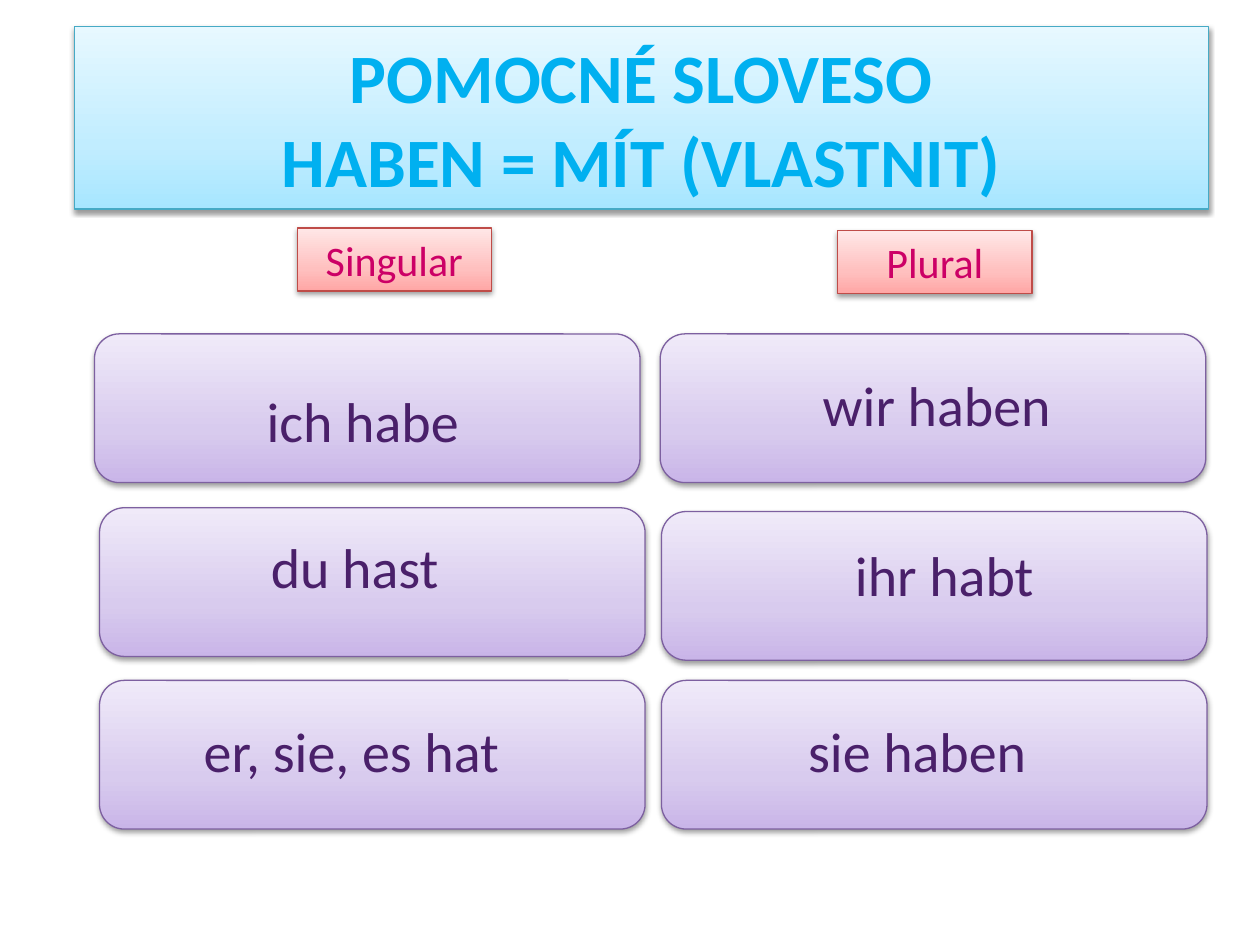
from copy import deepcopy
from dataclasses import dataclass

from lxml import etree
from pptx import Presentation
from pptx.dml.color import RGBColor
from pptx.enum.shapes import MSO_SHAPE as Shape
from pptx.enum.text import MSO_ANCHOR as Anchor, MSO_AUTO_SIZE as AutoSize, PP_ALIGN as Align
from pptx.oxml.ns import qn
from pptx.util import Inches, Pt


@dataclass(frozen=True)
class Theme:
    font: str = "Calibri"
    title_size: float = 39.6
    form_size: float = 32
    heading_size: float = 24
    title_color: str = "00B0F0"
    form_color: str = "4A206A"
    heading_color: str = "CC0066"
    # Outline, then gradient colours from bottom to top
    blue: tuple = ("46AAC5", "A7E6FF", "C1EDFF", "E7F8FF")
    red: tuple = ("BF4C48", "FFA6A5", "FFC0BF", "FFE7E7")
    purple: tuple = ("7D60A0", "C9B5E8", "D8CBEE", "F0EAF9")
    stops: tuple = (0, 0.35, 1)


THEME = Theme()
CARD_SIZE = (4.33, 1.18)
HEADING_SIZE = (1.54, 0.5)

# Heading text, left, top
HEADINGS = [("Singular", 2.36, 1.81), ("Plural", 6.65, 1.83)]

# Verb form, card position, text box
VERB_FORMS = [
    ("ich habe", (0.75, 2.65), (1.7, 3.02, 2.36, 0.64)),
    (" du hast", (0.79, 4.03), (1.57, 4.18, 2.39, 1.18)),
    ("er, sie, es hat", (0.79, 5.4), (0.83, 5.64, 3.92, 1.18)),
    ("wir haben", (5.24, 2.65), (5.69, 2.89, 3.49, 1.18)),
    ("ihr habt", (5.25, 4.06), (5.9, 4.24, 3.19, 1.18)),
    ("sie haben", (5.25, 5.4), (5.79, 5.64, 2.98, 1.18)),
]


def inches(*lengths):
    return [Inches(length) for length in lengths]


def write_text(shape, text, *, size, color, bold=False, anchor=Anchor.TOP):
    frame = shape.text_frame
    frame.word_wrap = True
    frame.auto_size = AutoSize.NONE
    frame.vertical_anchor = anchor
    paragraph = frame.paragraphs[0]
    paragraph.text = text
    paragraph.alignment = Align.CENTER
    for run in paragraph.runs:
        run.font.name = THEME.font
        run.font.size = Pt(size)
        run.font.bold = bold
        run.font.color.rgb = RGBColor.from_string(color)


def add_shadow(shape):
    shape.shadow.inherit = False
    effects = shape._element.spPr.find(qn("a:effectLst"))
    shadow = etree.SubElement(effects, qn("a:outerShdw"), blurRad="40000",
                              dist="20000", dir="5400000", rotWithShape="0")
    color = etree.SubElement(shadow, qn("a:srgbClr"), val="000000")
    etree.SubElement(color, qn("a:alpha"), val="38000")


def style_panel(shape, palette):
    outline, *colors = palette
    shape.fill.gradient()
    shape.fill.gradient_angle = 90
    # The default gradient has two stops; a third goes between them
    stop_list = shape._element.spPr.find(".//" + qn("a:gsLst"))
    stop_list.insert(1, deepcopy(stop_list[0]))
    for stop, position, color in zip(shape.fill.gradient_stops, THEME.stops, colors):
        stop.position = position
        stop.color.rgb = RGBColor.from_string(color)
    shape.line.color.rgb = RGBColor.from_string(outline)
    shape.line.width = Pt(0.75)
    add_shadow(shape)


def add_panel(slide, kind, box, palette):
    shape = slide.shapes.add_shape(kind, *inches(*box))
    style_panel(shape, palette)
    return shape


def add_title(slide, text):
    title = slide.shapes.title
    title.left, title.top, title.width, title.height = inches(0.59, 0.21, 9, 1.45)
    style_panel(title, THEME.blue)
    write_text(title, text, size=THEME.title_size, color=THEME.title_color,
               bold=True, anchor=Anchor.MIDDLE)


def add_heading(slide, text, left, top):
    heading = add_panel(slide, Shape.RECTANGLE, (left, top, *HEADING_SIZE), THEME.red)
    write_text(heading, text, size=THEME.heading_size, color=THEME.heading_color)


def add_verb_form(slide, text, card_position, text_box):
    add_panel(slide, Shape.ROUNDED_RECTANGLE, (*card_position, *CARD_SIZE), THEME.purple)
    label = slide.shapes.add_textbox(*inches(*text_box))
    write_text(label, text, size=THEME.form_size, color=THEME.form_color)


def main():
    presentation = Presentation()
    presentation.slide_width, presentation.slide_height = inches(10, 7.5)
    slide = presentation.slides.add_slide(presentation.slide_layouts[5])

    # Title
    add_title(slide, "POMOCNÉ SLOVESO\vHABEN = MÍT (VLASTNIT)")

    # Conjugation cards
    for form in VERB_FORMS:
        add_verb_form(slide, *form)

    # Column headings
    for heading in HEADINGS:
        add_heading(slide, *heading)

    presentation.save("out.pptx")


if __name__ == "__main__":
    main()
